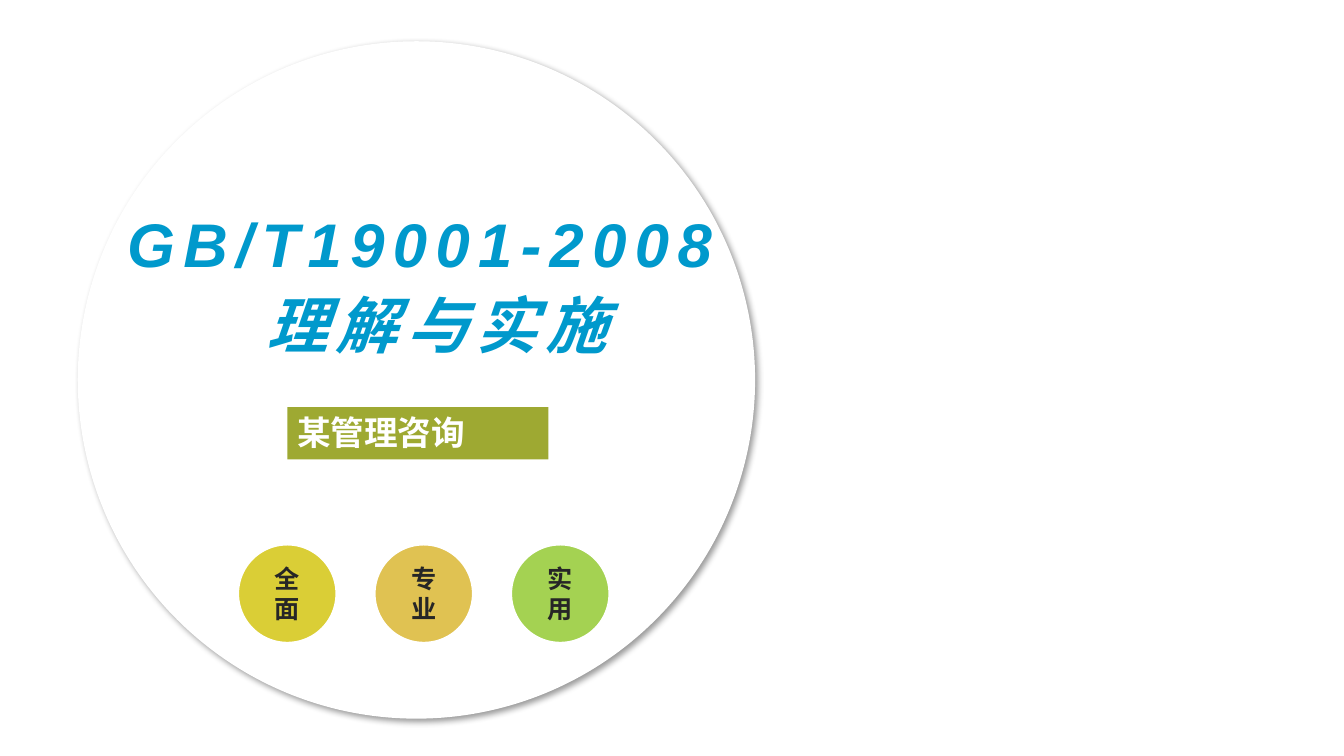
"""Build the cover slide of a quality management standard course."""
import lxml.etree
import pptx
import pptx.dml.color
import pptx.enum.shapes
import pptx.enum.text
import pptx.oxml.ns
import pptx.util

Cm = pptx.util.Cm
Pt = pptx.util.Pt
qn = pptx.oxml.ns.qn
ALIGN = pptx.enum.text.PP_ALIGN
ANCHOR = pptx.enum.text.MSO_ANCHOR
SHAPE = pptx.enum.shapes.MSO_SHAPE

TITLE = "GB/T19001-2008\v 理解与实施"
PRESENTER = "某管理咨询 "
QUALITIES = [("全面", "yellow"), ("专业", "orange"), ("实用", "green")]
COLOURS = {
    "white": "FFFFFF", "black": "000000", "blue": "0099CC", "dark": "262626",
    "olive": "9EA932", "yellow": "DACE36", "orange": "E0C252", "green": "A4D252",
}
CJK_FONT = "Noto Sans CJK SC"
BADGE_LEFT, BADGE_TOP, BADGE_SIZE, BADGE_PITCH = 6.0, 13.72, 2.48, 3.44


def colour(name):
    return pptx.dml.color.RGBColor.from_string(COLOURS[name])


def write(shape, text, size, ink, font="Arial", align=ALIGN.CENTER,
          anchor=ANCHOR.MIDDLE, italic=False, spacing=0, line_spacing=None):
    frame = shape.text_frame
    frame.word_wrap = True
    frame.auto_size = pptx.enum.text.MSO_AUTO_SIZE.NONE
    frame.vertical_anchor = anchor
    para = frame.paragraphs[0]
    para.text = text
    para.alignment = align
    para.line_spacing = line_spacing
    for span in para.runs:
        span.font.size = Pt(size)
        span.font.bold = True
        span.font.italic = italic
        span.font.color.rgb = colour(ink)
        span.font.name = font
        properties = span.font._element
        properties.set("spc", str(spacing * 100))
        latin = properties.find(qn("a:latin"))
        east_asian = lxml.etree.Element(qn("a:ea"), typeface=CJK_FONT)
        latin.addnext(east_asian)


def add_filled(page, kind, left, top, width, height, fill, outline=None):
    shape = page.shapes.add_shape(kind, Cm(left), Cm(top), Cm(width), Cm(height))
    shape.shadow.inherit = False
    shape.fill.solid()
    shape.fill.fore_color.rgb = colour(fill)
    if outline:
        shape.line.color.rgb = colour(outline)
        shape.line.width = Pt(1.5)
    else:
        shape.line.fill.background()
    return shape


def add_soft_shadow(shape):
    effects = shape._element.spPr.find(qn("a:effectLst"))
    shadow = lxml.etree.SubElement(
        effects, qn("a:outerShdw"), blurRad=str(Pt(4)), dist=str(Pt(3)),
        dir=str(45 * 60000), algn="tl", rotWithShape="0")
    tint = lxml.etree.SubElement(shadow, qn("a:srgbClr"), val=COLOURS["black"])
    lxml.etree.SubElement(tint, qn("a:alpha"), val="40000")


def main():
    deck = pptx.Presentation()
    deck.slide_width, deck.slide_height = Cm(33.87), Cm(19.05)
    page = deck.slides.add_slide(deck.slide_layouts[5])

    disc = add_filled(page, SHAPE.OVAL, 1.96, 1.04, 17.07, 17.07, "white")
    add_soft_shadow(disc)
    title = page.shapes.title
    disc._element.addnext(title._element)
    title.left, title.top, title.width, title.height = (
        Cm(2.36), Cm(4.65), Cm(16.66), Cm(4.45))
    title.text_frame.margin_bottom = 0
    write(title, TITLE, 44, "blue", anchor=ANCHOR.BOTTOM, italic=True,
          spacing=6, line_spacing=1.1)

    banner = add_filled(page, SHAPE.RECTANGLE, 7.24, 10.26, 6.58, 1.32, "olive")
    write(banner, PRESENTER, 24, "white", font=CJK_FONT, align=ALIGN.JUSTIFY,
          anchor=ANCHOR.TOP)

    for index, (quality, fill) in enumerate(QUALITIES):
        badge = add_filled(page, SHAPE.OVAL, BADGE_LEFT + index * BADGE_PITCH,
                           BADGE_TOP, BADGE_SIZE, BADGE_SIZE, fill, "white")
        write(badge, quality, 18, "dark")

    deck.save("out.pptx")


if __name__ == "__main__":
    main()
